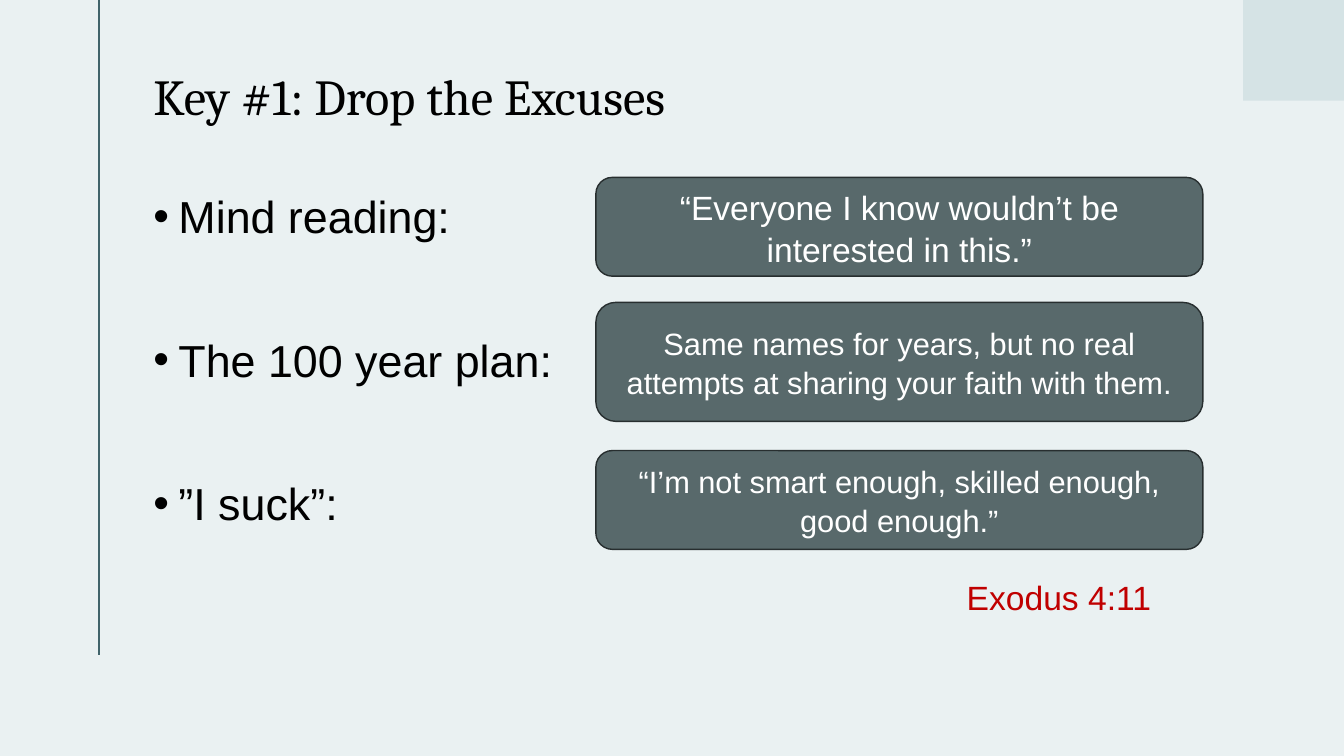
from lxml import etree
from pptx import Presentation
from pptx.dml.color import RGBColor
from pptx.enum.shapes import MSO_CONNECTOR, MSO_SHAPE
from pptx.enum.text import MSO_ANCHOR, PP_ALIGN
from pptx.oxml.ns import qn
from pptx.util import Inches, Pt

STRAIGHT = MSO_CONNECTOR.STRAIGHT
RECTANGLE, ROUNDED = MSO_SHAPE.RECTANGLE, MSO_SHAPE.ROUNDED_RECTANGLE
TOP, MIDDLE = MSO_ANCHOR.TOP, MSO_ANCHOR.MIDDLE
LEFT, CENTER = PP_ALIGN.LEFT, PP_ALIGN.CENTER

BACKGROUND = RGBColor(0xEA, 0xF1, 0xF2)
RULE = RGBColor(0x40, 0x63, 0x6A)
CORNER = RGBColor(0xD5, 0xE3, 0xE5)
CARD = RGBColor(0x58, 0x69, 0x6B)
CARD_EDGE = RGBColor(0x27, 0x2E, 0x2F)
BLACK = RGBColor(0, 0, 0)
WHITE = RGBColor(0xFF, 0xFF, 0xFF)
RED = RGBColor(0xC0, 0, 0)

SLIDE_WIDTH, SLIDE_HEIGHT = 13.33, 7.5
EXCUSES = ["Mind reading:", "The 100 year plan:", "”I suck”:"]
# top, height, text size, text
CARDS = [
    (1.76, 0.98, 24, "“Everyone I know wouldn’t be interested in this.”"),
    (3.0, 1.18, 22, "Same names for years, but no real attempts at sharing "
                    "your faith with them."),
    (4.47, 0.98, 22, "“I’m not smart enough, skilled enough, good enough.”"),
]


def inches(box):
    return [Inches(length) for length in box]


def write(frame, *lines, size, color, font="Arial", align=LEFT, anchor=TOP,
          insets=(0.1, 0.05, 0.1, 0.05), spacing=1.05, after=0):
    """Fill a text frame with one paragraph per line; return the paragraphs."""
    frame.word_wrap = True
    frame.vertical_anchor = anchor
    (frame.margin_left, frame.margin_top,
     frame.margin_right, frame.margin_bottom) = inches(insets)
    frame.text = "\n".join(lines)
    for paragraph in frame.paragraphs:
        paragraph.alignment = align
        paragraph.line_spacing = spacing
        paragraph.space_before = Pt(0)
        paragraph.space_after = Pt(after)
        paragraph.font.size = Pt(size)
        paragraph.font.name = font
        paragraph.font.color.rgb = color
    return frame.paragraphs


def add_bullet(paragraph, indent):
    properties = paragraph._p.get_or_add_pPr()
    properties.set("marL", str(Inches(indent)))
    properties.set("indent", str(-Inches(indent)))
    font = etree.Element(qn("a:buFont"), typeface="Arial")
    bullet = etree.Element(qn("a:buChar"), char="•")
    position = len(properties.findall(qn("a:lnSpc"))
                   + properties.findall(qn("a:spcBef"))
                   + properties.findall(qn("a:spcAft")))
    properties.insert(position, font)
    properties.insert(position + 1, bullet)


def add_decoration(slide):
    slide.background.fill.solid()
    slide.background.fill.fore_color.rgb = BACKGROUND
    rule = slide.shapes.add_connector(STRAIGHT, *inches((0.98, 0, 0.98, 6.5)))
    rule.line.color.rgb = RULE
    rule.line.width = Pt(1.5)
    etree.SubElement(rule._element.spPr, qn("a:effectLst"))
    corner = slide.shapes.add_shape(RECTANGLE, *inches((SLIDE_WIDTH - 1, 0, 1, 1)))
    corner.shadow.inherit = False
    corner.fill.solid()
    corner.fill.fore_color.rgb = CORNER
    corner.line.fill.background()


def add_title(slide, box, text):
    title = slide.shapes.title
    title.left, title.top, title.width, title.height = inches(box)
    write(title.text_frame, text, size=36, color=BLACK, font="Cambria",
          anchor=MIDDLE, insets=(0, 0.05, 0.1, 0.05), spacing=0.9)


def add_excuses(slide, box):
    excuses = slide.shapes.add_textbox(*inches(box))
    for paragraph in write(excuses.text_frame, *EXCUSES, size=32, color=BLACK,
                           insets=(0, 0, 0, 0), after=62):
        add_bullet(paragraph, indent=0.25)


def add_card(slide, box, text, size):
    card = slide.shapes.add_shape(ROUNDED, *inches(box))
    card.shadow.inherit = False
    card.fill.solid()
    card.fill.fore_color.rgb = CARD
    card.line.color.rgb = CARD_EDGE
    card.line.width = Pt(1)
    write(card.text_frame, text, size=size, color=WHITE, align=CENTER, anchor=MIDDLE)


def add_verse(slide, box, text):
    verse = slide.shapes.add_textbox(*inches(box))
    write(verse.text_frame, text, size=24, color=RED)


def main():
    deck = Presentation()
    deck.slide_width, deck.slide_height = inches((SLIDE_WIDTH, SLIDE_HEIGHT))
    slide = deck.slides.add_slide(deck.slide_layouts[5])
    add_decoration(slide)
    add_title(slide, (1.52, 0.2, 10.01, 1.56), "Key #1: Drop the Excuses")
    add_excuses(slide, (1.52, 1.85, 4.78, 4.51))
    add_verse(slide, (9.49, 5.65, SLIDE_WIDTH - 9.49, 0.5), "Exodus 4:11")
    for top, height, size, text in CARDS:
        add_card(slide, (5.91, top, 6.02, height), text, size)
    deck.save("out.pptx")


if __name__ == "__main__":
    main()
